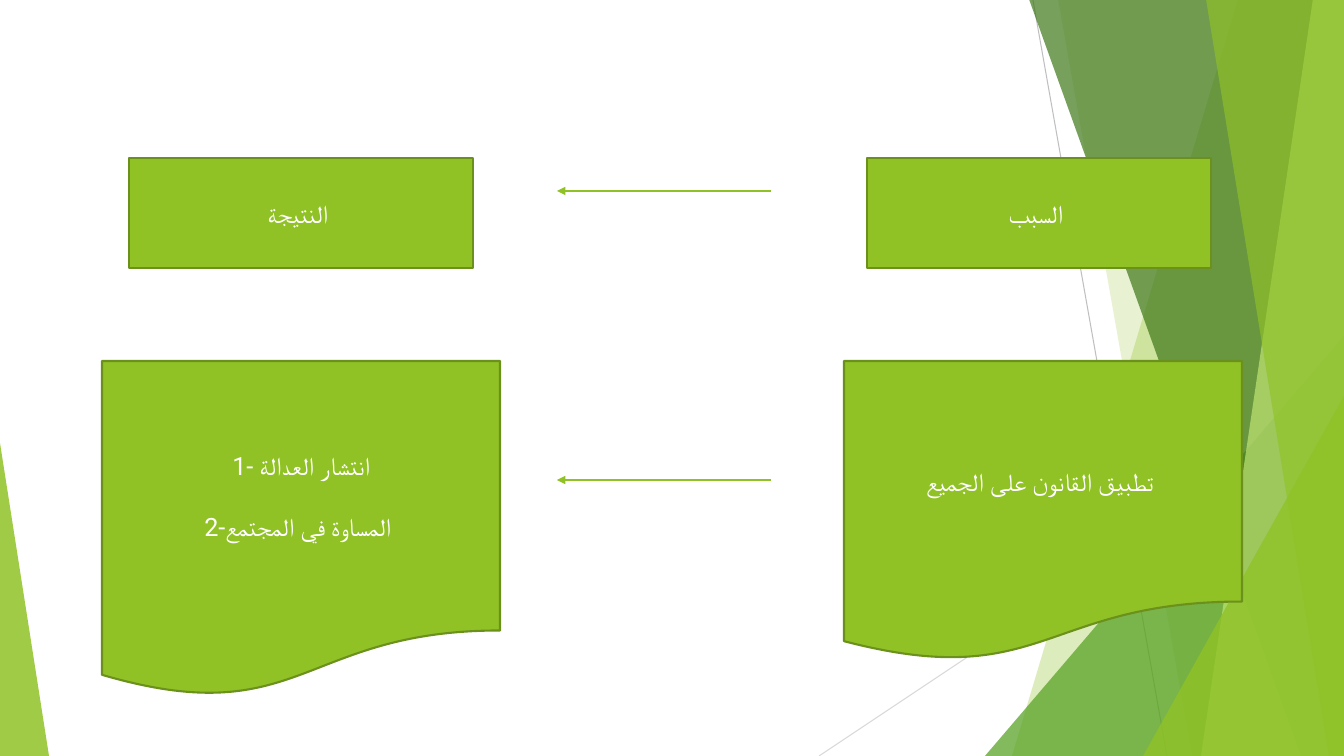
from lxml.etree import SubElement
from pptx import Presentation
from pptx.dml.color import RGBColor
from pptx.enum.shapes import MSO_CONNECTOR, MSO_SHAPE as Preset
from pptx.enum.text import MSO_ANCHOR, PP_ALIGN
from pptx.oxml.ns import qn
from pptx.util import Emu, Pt

PX = 914400 / 100.8
WIDTH, HEIGHT = 1344, 756

WHITE = RGBColor(0xFF, 0xFF, 0xFF)
GREEN = RGBColor(0x90, 0xC2, 0x26)
OUTLINE = RGBColor(0x6B, 0x90, 0x1C)
LEAF = RGBColor(0x54, 0xA0, 0x21)
FOREST = RGBColor(0x3F, 0x78, 0x19)
LIME = RGBColor(0xC0, 0xE4, 0x74)
GREY = RGBColor(0xBF, 0xBF, 0xBF)
PALE_GREY = RGBColor(0xD9, 0xD9, 0xD9)

# start, end, colour
RAYS = [
    ((1033, 0), (1167, HEIGHT), GREY),
    ((WIDTH, 406), (819, HEIGHT), PALE_GREY),
]

# Bands reach the right edge: (top left x, bottom left x).
# Triangles stand on the bottom edge: (left, top, width, apex position).
# Each is followed by its colour and opacity in percent.
FACETS = [
    ((1238, 1012), GREEN, 30),
    ((1058, 1192), GREEN, 20),
    ((985, 336, 359, 1), LEAF, 72),
    ((1029, 1301), FOREST, 70),
    ((1313, 1201), LIME, 70),
    ((1206, 1329), GREEN, 65),
    ((1143, 396, 201, 1), GREEN, 80),
    ((0, 443, 49, 0), GREEN, 85),
]

CAUSE_CENTER, RESULT_CENTER = 1043, 301
HEADING_SIZE, NOTE_WIDTH = (344, 110), 398

# preset, left, top, width, height, paragraphs
CARDS = [
    (Preset.FLOWCHART_DOCUMENT, 844, 361, NOTE_WIDTH, 300, ["تطبيق القانون على الجميع "]),
    (Preset.FLOWCHART_DOCUMENT, 102, 361, NOTE_WIDTH, 336,
     ["1- انتشار العدالة", "2-المساوة في المجتمع "]),
    (Preset.RECTANGLE, 867, 158, *HEADING_SIZE, ["السبب "]),
    (Preset.RECTANGLE, 129, 158, *HEADING_SIZE, ["النتيجة "]),
]

ARROW_FROM, ARROW_TO = 771, 557
ARROW_ROWS = [191, 480]


def px(*lengths):
    return [Emu(round(length * PX)) for length in lengths]


def add_line(shapes, start, end, color, width):
    line = shapes.add_connector(MSO_CONNECTOR.STRAIGHT, *px(*start, *end))
    line.line.color.rgb = color
    line.line.width = Pt(width)
    SubElement(line._element.spPr, qn("a:effectLst"))
    return line


def add_arrow(shapes, y):
    arrow = add_line(shapes, (ARROW_FROM, y), (ARROW_TO, y), GREEN, 1)
    SubElement(arrow.line._get_or_add_ln(), qn("a:tailEnd"), type="triangle")


def add_band(shapes, top_left, bottom_left):
    builder = shapes.build_freeform(top_left, -1, scale=PX)
    builder.add_line_segments([(WIDTH, -1), (WIDTH, HEIGHT), (bottom_left, HEIGHT)], close=True)
    return builder.convert_to_shape()


def add_triangle(shapes, left, top, width, apex):
    triangle = shapes.add_shape(Preset.ISOSCELES_TRIANGLE, *px(left, top, width, HEIGHT - top))
    triangle.adjustments[0] = apex
    return triangle


def add_facet(shapes, outline, color, opacity):
    """Draw a translucent band or triangle, told apart by its outline values."""
    draw = add_band if len(outline) == 2 else add_triangle
    facet = draw(shapes, *outline)
    facet.shadow.inherit = False
    facet.line.fill.background()
    facet.fill.solid()
    facet.fill.fore_color.rgb = color
    tint = facet._element.spPr.find(qn("a:solidFill")).find(qn("a:srgbClr"))
    SubElement(tint, qn("a:alpha"), val=str(opacity * 1000))


def write(frame, lines, *, size=18, font="Roboto", color=WHITE, gap=22):
    frame.word_wrap = True
    frame.vertical_anchor = MSO_ANCHOR.MIDDLE
    for index, line in enumerate(lines):
        paragraph = frame.add_paragraph() if index else frame.paragraphs[0]
        paragraph.alignment = PP_ALIGN.CENTER
        if index:
            paragraph.space_before = Pt(gap)
        run = paragraph.add_run()
        run.text = line
        run.font.size = Pt(size)
        run.font.name = font
        run.font.color.rgb = color


def add_card(shapes, preset, left, top, width, height, lines):
    card = shapes.add_shape(preset, *px(left, top, width, height))
    card.shadow.inherit = False
    card.fill.solid()
    card.fill.fore_color.rgb = GREEN
    card.line.color.rgb = OUTLINE
    card.line.width = Pt(1.5)
    write(card.text_frame, lines)


def main():
    deck = Presentation()
    deck.slide_width, deck.slide_height = px(WIDTH, HEIGHT)
    shapes = deck.slides.add_slide(deck.slide_layouts.get_by_name("Blank")).shapes
    for start, end, color in RAYS:
        add_line(shapes, start, end, color, 0.75)
    for facet in FACETS:
        add_facet(shapes, *facet)
    for card in CARDS:
        add_card(shapes, *card)
    for row in ARROW_ROWS:
        add_arrow(shapes, row)
    deck.save("out.pptx")


if __name__ == "__main__":
    main()
